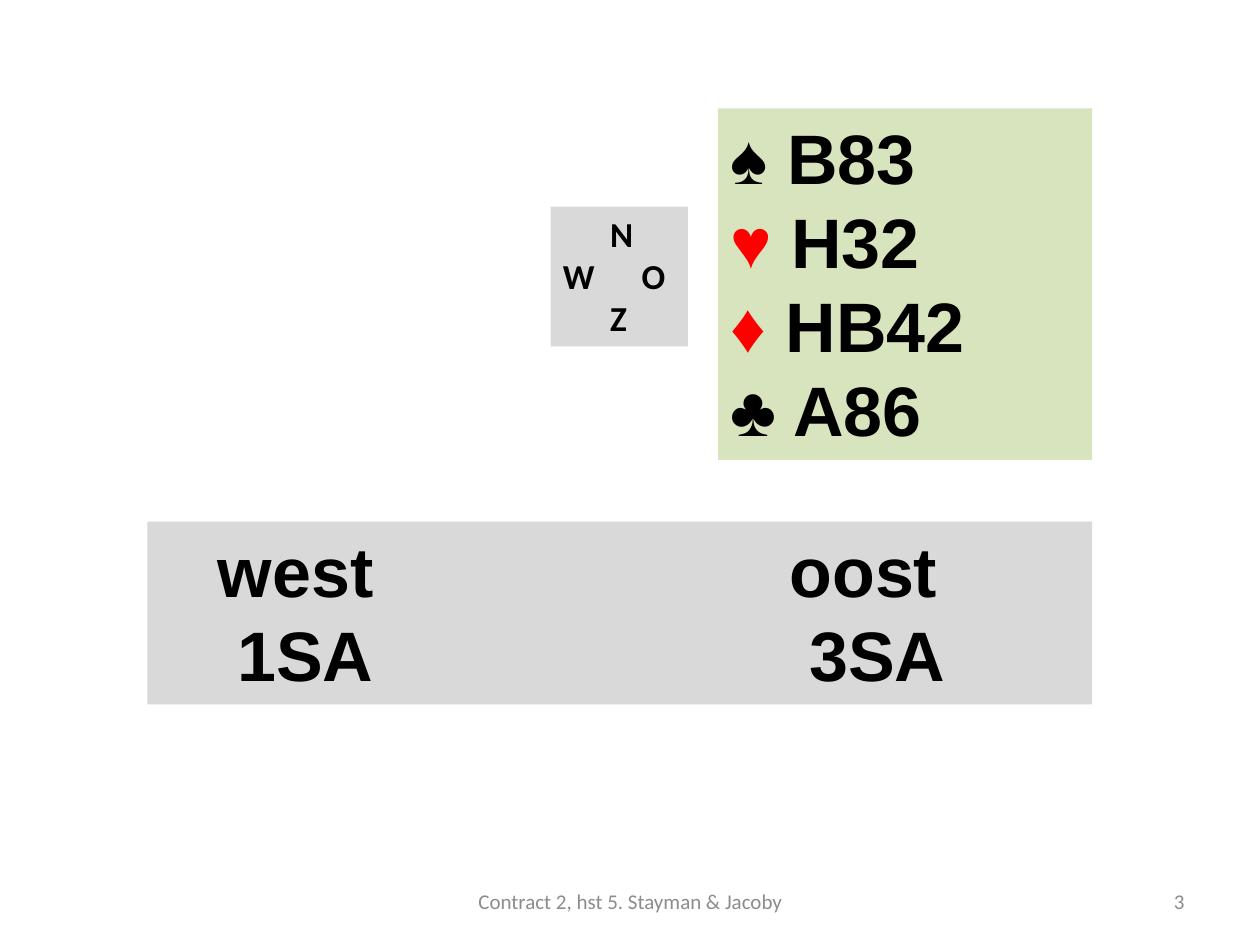
"""Build a bridge slide with an east hand, a compass, the bidding and a footer."""
from lxml import etree
from pptx import Presentation
from pptx.dml.color import RGBColor
from pptx.enum import shapes, text
from pptx.oxml import ns
from pptx.util import Pt

THEME = {
    "hand": "D7E4BD", "panel": "D9D9D9", "ink": "000000", "red": "FF0000", "muted": "8C8C8C",
    "display": {"name": "Arial", "size": Pt(40), "bold": True},
    "compass": {"name": "Calibri", "size": Pt(20), "bold": True},
    "footer": {"name": "Calibri", "size": Pt(12), "bold": False},
}
HAND = [("♠", "ink", "B83"), ("♥", "red", "H32"), ("♦", "red", "HB42"), ("♣", "ink", "A86")]
COMPASS = [("\tN", [27]), ("W\tO", [45]), ("\tZ", [27])]
BIDDING = [("\twest\toost", [33.3, 360]), ("\t1SA\t3SA", [44.4, 371.1])]
PANELS = [
    {"box": (410.4, 61.9, 213.8, 200.9), "fill": "hand", "font": "display",
     "lines": [([(suit, colour), (f" {cards}", "ink")], []) for suit, colour, cards in HAND]},
    {"box": (314.6, 118.1, 78.5, 79.9), "fill": "panel", "font": "compass",
     "lines": [([(line, "ink")], stops) for line, stops in COMPASS]},
    {"box": (84.2, 298.1, 540, 104.4), "fill": "panel", "font": "display",
     "lines": [([(line, "ink")], stops) for line, stops in BIDDING]},
]
FOOTERS = [
    ("3", (516.2, 500.4, 167.8, 28.8), text.PP_ALIGN.RIGHT),
    ("Contract 2, hst 5. Stayman & Jacoby", (246.2, 500.4, 228.2, 28.8), text.PP_ALIGN.CENTER),
]


def rgb(name):
    """Return a theme colour."""
    return RGBColor.from_string(THEME[name])


def add_run(p, words, font, colour):
    """Add one run in a theme font and colour."""
    r = p.add_run()
    r.text = words
    for key, value in THEME[font].items():
        setattr(r.font, key, value)
    r.font.color.rgb = rgb(colour)


def add_stops(p, stops):
    """Set left tab stops, given in points."""
    tabs = etree.SubElement(p._p.get_or_add_pPr(), ns.qn("a:tabLst"))
    for stop in stops:
        etree.SubElement(tabs, ns.qn("a:tab"), pos=str(Pt(stop)), algn="l")


def add_panel(s, box, fill, font, lines):
    """Add a filled rectangle with left-aligned lines."""
    sp = s.shapes.add_shape(shapes.MSO_SHAPE.RECTANGLE, *map(Pt, box))
    sp.shadow.inherit = False
    sp.fill.solid()
    sp.fill.fore_color.rgb = rgb(fill)
    sp.line.fill.background()
    tf = sp.text_frame
    tf.word_wrap = True
    tf.vertical_anchor = text.MSO_ANCHOR.TOP
    for i, (runs, stops) in enumerate(lines):
        p = tf.add_paragraph() if i else tf.paragraphs[0]
        p.alignment = text.PP_ALIGN.LEFT
        if stops:
            add_stops(p, stops)
        for words, colour in runs:
            add_run(p, words, font, colour)


def add_footer(s, words, box, align):
    """Add one line of footer text."""
    tf = s.shapes.add_textbox(*map(Pt, box)).text_frame
    tf.word_wrap = True
    tf.vertical_anchor = text.MSO_ANCHOR.MIDDLE
    p = tf.paragraphs[0]
    p.alignment = align
    add_run(p, words, "footer", "muted")


def main():
    """Build and save the slide."""
    prs = Presentation()
    prs.slide_width, prs.slide_height = Pt(720), Pt(540)
    s = prs.slides.add_slide(prs.slide_layouts[6])
    for panel in PANELS:
        add_panel(s, **panel)
    for footer in FOOTERS:
        add_footer(s, *footer)
    prs.save("out.pptx")


if __name__ == "__main__":
    main()
